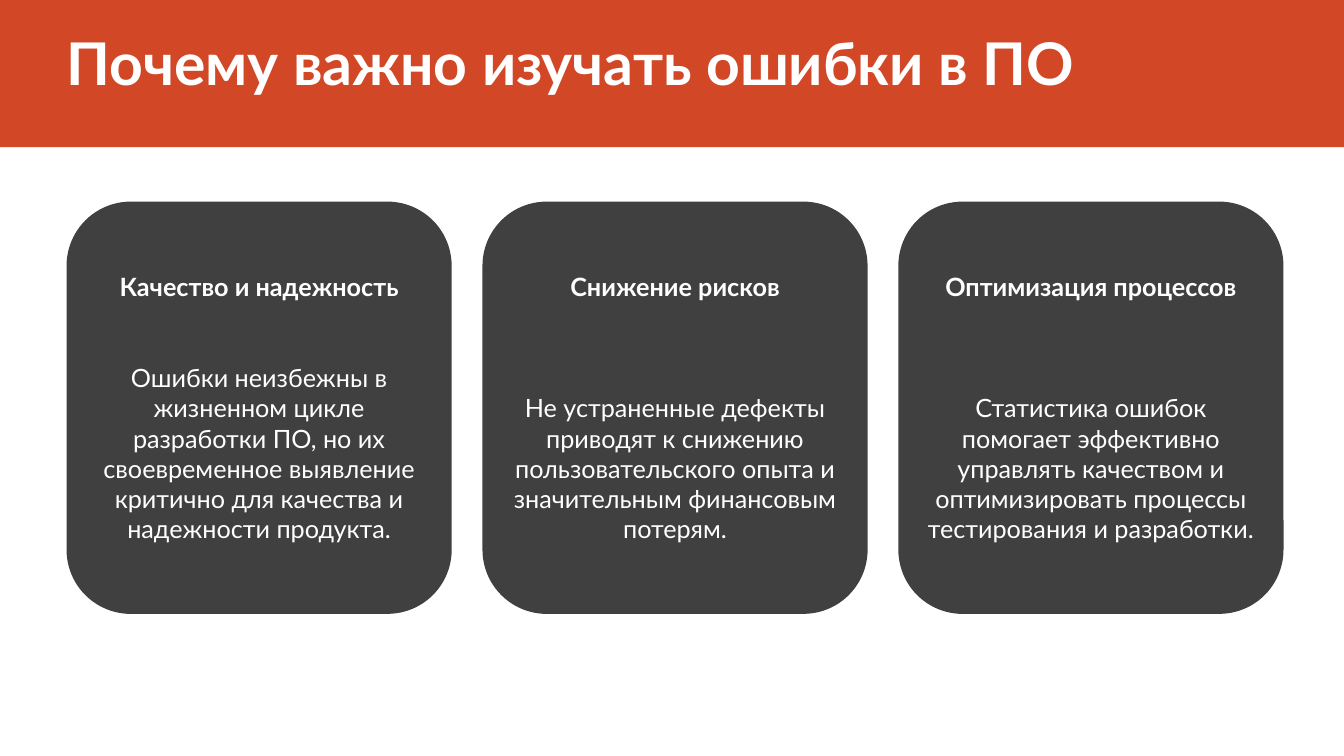
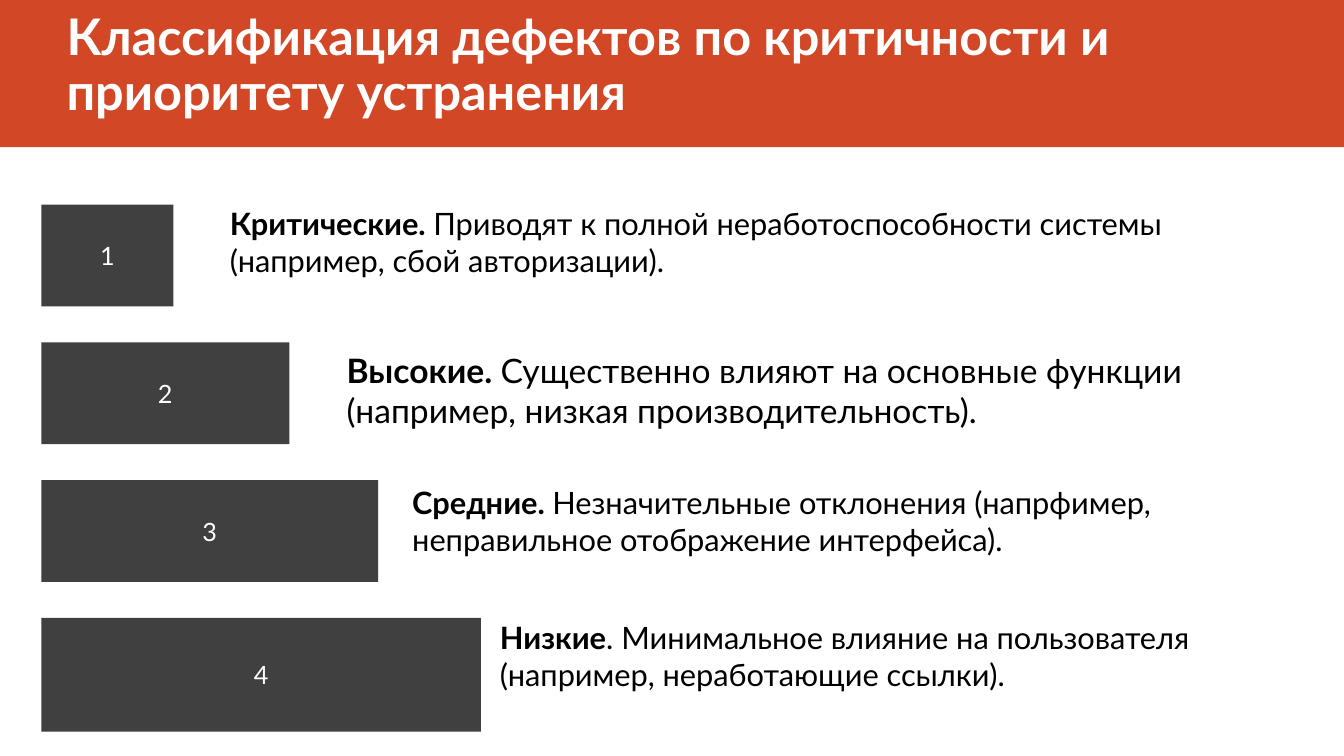
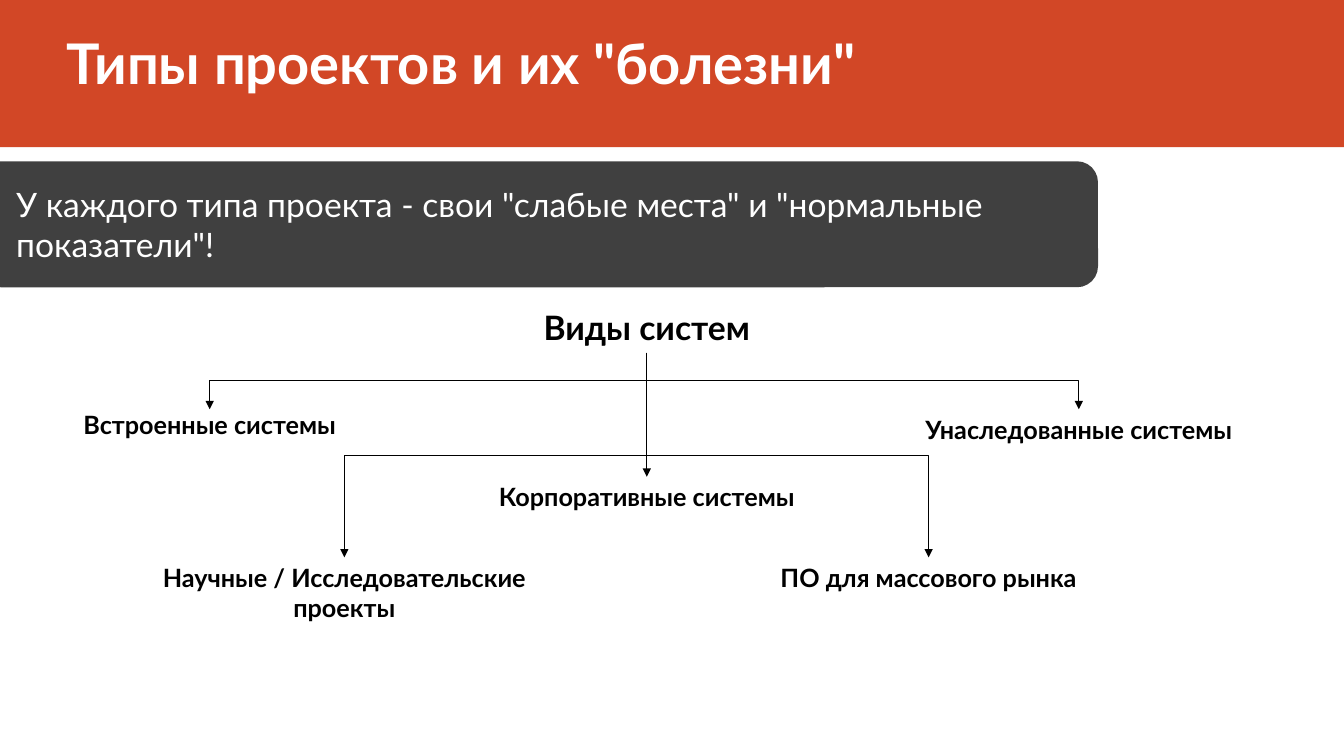
from lxml import etree
from pptx import Presentation
from pptx.dml.color import RGBColor
from pptx.enum import shapes, text
from pptx.oxml.ns import qn
from pptx.util import Emu, Pt

# Shared style; lengths are px, 100 to the inch
PX = 9144
FONT = "Lato"
COLORS = {"band": "D24726", "panel": "404040", "light": "FFFFFF", "dark": "000000"}
SLIDE = (1333, 750)
BAND = (0, 0, 1333, 146)
TITLE_BOX = (66, 0, 1175, 132)
INSETS = (10, 5, 10, 5)
NO_INSETS = (0, 0, 0, 0)
LEFT, CENTER = text.PP_ALIGN.LEFT, text.PP_ALIGN.CENTER
TOP, MIDDLE = text.MSO_ANCHOR.TOP, text.MSO_ANCHOR.MIDDLE

# Slide 1: heading, text, gap between them in points
CARDS_TITLE = ("Почему важно изучать ошибки в ПО", 42)
CARDS_AREA = (66, 200, 1207, 409)
CARD_WIDTH = 382
CARDS = [
    ("Качество и надежность",
     "Ошибки неизбежны в жизненном цикле разработки ПО, но их своевременное "
     "выявление критично для качества и надежности продукта.", 43.2),
    ("Снижение рисков",
     "Не устраненные дефекты приводят к снижению пользовательского опыта и "
     "значительным финансовым потерям.", 64.8),
    ("Оптимизация процессов",
     "Статистика ошибок помогает эффективно управлять качеством и "
     "оптимизировать процессы тестирования и разработки.", 64.8),
]

# Slide 2: bar width and height, text box, insets, size, bold part, plain part
LEVELS_TITLE = ("Классификация дефектов по критичности и приоритету устранения", 36)
BAR_LEFT, FIRST_BAR, LAST_BAR = 41, 203, 613
LEVELS = [
    ((131, 101), (228, 203, 1032, 101), NO_INSETS, 22, "Критические. ",
     "Приводят к полной неработоспособности системы (например, сбой авторизации)."),
    ((246, 101), (334, 342, 908, 90), INSETS, 24, "Высокие. ",
     "Существенно влияют на основные функции (например, низкая производительность)."),
    ((334, 101), (399, 475, 883, 83), INSETS, 22, "Средние. ",
     "Незначительные отклонения (напрфимер, неправильное отображение интерфейса)."),
    ((436, 113), (486, 609, 838, 83), INSETS, 22, "Низкие",
     ". Минимальное влияние на пользователя (например, неработающие ссылки)."),
]

# Slide 3: tree root and its branches
TYPES_TITLE = ('Типы проектов и их "болезни"', 40)
BANNER = ('У каждого типа проекта - свои "слабые места" и "нормальные показатели"!',
          (-20, 160, 1109, 125), (30, 5, 10, 5))
ROOT = ("Виды систем", (501, 300, 281, 50), INSETS)
BRANCHES = [
    ("Встроенные системы", (30, 406, 356, 68), NO_INSETS),
    ("Научные / Исследовательские проекты", (151, 553, 381, 130), INSETS),
    ("Корпоративные системы", (443, 473, 397, 70), INSETS),
    ("Унаследованные системы", (906, 406, 328, 100), INSETS),
    ("ПО для массового рынка", (754, 553, 334, 100), INSETS),
]


def emu(lengths):
    return [Emu(round(length * PX)) for length in lengths]


def rgb(name):
    return RGBColor.from_string(COLORS[name])


def write(box, paragraphs, size, color="dark", align=LEFT, anchor=TOP,
          insets=INSETS, gap=0, spacing=None):
    """Fill a shape with paragraphs, each a list of (words, bold) spans."""
    frame = box.text_frame
    left, top, right, bottom = emu(insets)
    frame_format = {"word_wrap": True, "auto_size": text.MSO_AUTO_SIZE.NONE,
                    "vertical_anchor": anchor, "margin_left": left, "margin_top": top,
                    "margin_right": right, "margin_bottom": bottom}
    for name, value in frame_format.items():
        setattr(frame, name, value)
    for index, spans in enumerate(paragraphs):
        para = frame.add_paragraph() if index else frame.paragraphs[0]
        para_format = {"alignment": align, "line_spacing": spacing,
                       "space_before": Pt(gap if index else 0)}
        for name, value in para_format.items():
            setattr(para, name, value)
        for words, bold in spans:
            span = para.add_run()
            span.text = words
            for name, value in {"name": FONT, "size": Pt(size), "bold": bold}.items():
                setattr(span.font, name, value)
            span.font.color.rgb = rgb(color)


def add_panel(page, area, color="panel", kind=shapes.MSO_SHAPE.RECTANGLE):
    panel = page.shapes.add_shape(kind, *emu(area))
    panel.shadow.inherit = False
    panel.fill.solid()
    panel.fill.fore_color.rgb = rgb(color)
    panel.line.fill.background()
    return panel


def add_label(page, area, spans, size, **style):
    write(page.shapes.add_textbox(*emu(area)), [spans], size, **style)


def add_page(deck, title):
    words, size = title
    page = deck.slides.add_slide(deck.slide_layouts[5])
    box = page.shapes.title
    box.left, box.top, box.width, box.height = emu(TITLE_BOX)
    write(box, [[(words, True)]], size, "light", anchor=MIDDLE,
          insets=NO_INSETS, spacing=0.9)
    return page


def add_arrow(page, start, end):
    """Draw a downward arrow, bent halfway when the ends are not in line."""
    (x0, y0), (x1, y1) = start, end
    bent = abs(x1 - x0) > 1
    kind, ends, turn = shapes.MSO_CONNECTOR.STRAIGHT, (x0, y0, x1, y1), 0
    if bent:
        # An elbow runs sideways first, so its frame is turned about the centre
        kind = shapes.MSO_CONNECTOR.ELBOW
        mid_x, mid_y = (x0 + x1) / 2, (y0 + y1) / 2
        half_w, half_h = (y1 - y0) / 2, abs(x1 - x0) / 2
        turn = 270 if x1 > x0 else 90
        if x1 > x0:
            half_w = -half_w
        ends = (mid_x - half_w, mid_y - half_h, mid_x + half_w, mid_y + half_h)
    arrow = page.shapes.add_connector(kind, *emu(ends))
    arrow.line.color.rgb = rgb("dark")
    arrow.line.width = Pt(0.75)
    props = arrow._element.spPr
    if turn:
        props.find(qn("a:xfrm")).set("rot", str(turn * 60000))
    etree.SubElement(props.find(qn("a:ln")), qn("a:tailEnd"), type="triangle")
    etree.SubElement(props, qn("a:effectLst"))


def build_cards(deck):
    page = add_page(deck, CARDS_TITLE)
    left, top, width, height = CARDS_AREA
    pitch = (width - CARD_WIDTH) / (len(CARDS) - 1)
    for index, (heading, body, gap) in enumerate(CARDS):
        card = add_panel(page, (left + index * pitch, top, CARD_WIDTH, height),
                         kind=shapes.MSO_SHAPE.ROUNDED_RECTANGLE)
        write(card, [[(heading, True)], [(body, False)]], 18, "light",
              CENTER, MIDDLE, gap=gap)


def build_levels(deck):
    page = add_page(deck, LEVELS_TITLE)
    pitch = (LAST_BAR - FIRST_BAR) / (len(LEVELS) - 1)
    for index, (bar_size, area, insets, size, name, details) in enumerate(LEVELS):
        bar = add_panel(page, (BAR_LEFT, FIRST_BAR + index * pitch, *bar_size))
        write(bar, [[(str(index + 1), False)]], 18, "light", CENTER, MIDDLE)
        add_label(page, area, [(name, True), (details, False)], size, insets=insets)


def build_types(deck):
    page = add_page(deck, TYPES_TITLE)
    words, area, insets = BANNER
    banner = add_panel(page, area, kind=shapes.MSO_SHAPE.ROUNDED_RECTANGLE)
    write(banner, [[(words, False)]], 24, "light", anchor=MIDDLE, insets=insets)

    # Tree: arrows run from the root's bottom to the top of each branch
    for size, labels in ((24, [ROOT]), (18, BRANCHES)):
        for words, area, insets in labels:
            add_label(page, area, [(words, True)], size, align=CENTER, insets=insets)
    left, top, width, height = ROOT[1]
    start = (left + width / 2, top + height)
    for _, (left, top, width, _), _ in BRANCHES:
        add_arrow(page, start, (left + width / 2, top))


def main():
    deck = Presentation()
    deck.slide_width, deck.slide_height = emu(SLIDE)
    for build in (build_cards, build_levels, build_types):
        build(deck)

    # The title band belongs to the layout, behind every title
    band = add_panel(deck.slides[0], BAND, "band")
    deck.slide_layouts[5].shapes.element.insert(2, band.element)
    deck.save("out.pptx")


if __name__ == "__main__":
    main()
